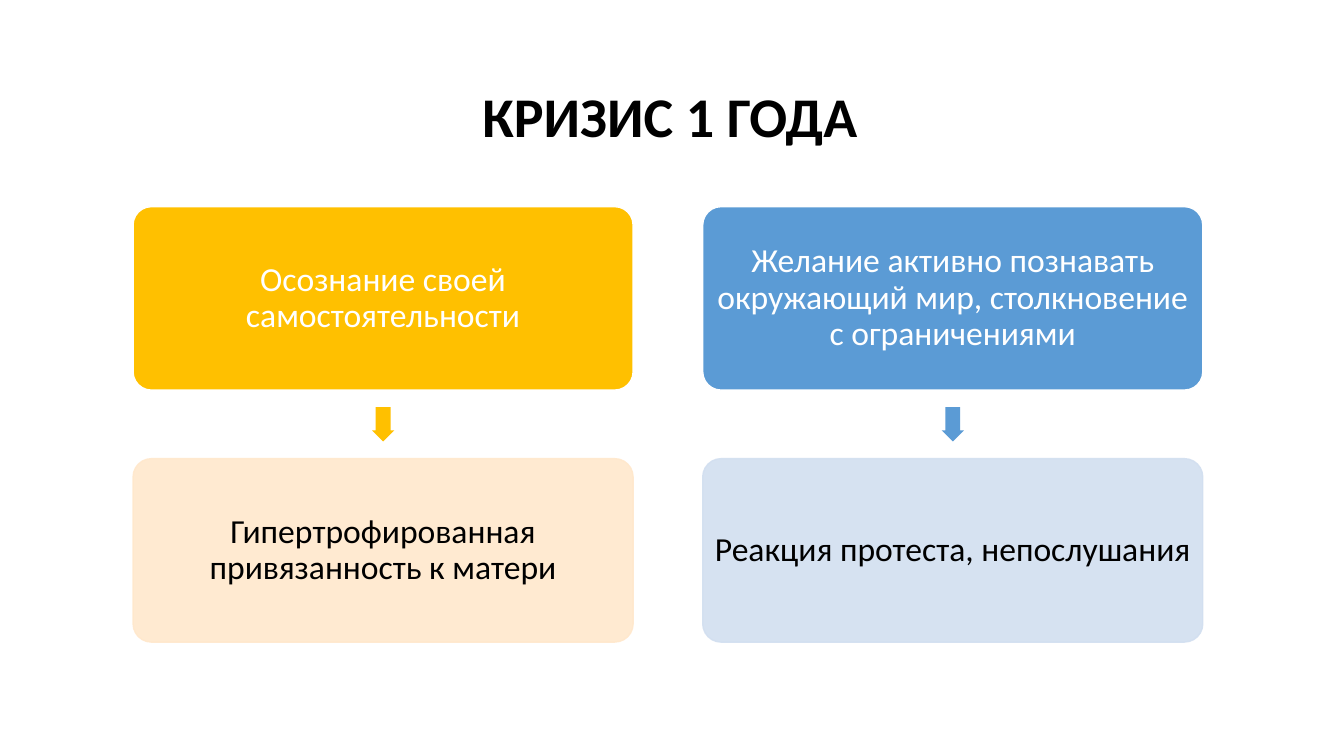
from pptx import Presentation
from pptx.dml.color import RGBColor
from pptx.enum.shapes import MSO_SHAPE
from pptx.enum.text import MSO_ANCHOR, PP_ALIGN
from pptx.oxml.ns import qn
from pptx.util import Inches, Pt
from lxml import etree

ROUNDED, DOWN_ARROW = MSO_SHAPE.ROUNDED_RECTANGLE, MSO_SHAPE.DOWN_ARROW
CENTER, MIDDLE = PP_ALIGN.CENTER, MSO_ANCHOR.MIDDLE

WHITE = RGBColor(0xFF, 0xFF, 0xFF)
BLACK = RGBColor(0x00, 0x00, 0x00)
GOLD = RGBColor(0xFF, 0xC0, 0x00)
BLUE = RGBColor(0x5B, 0x9B, 0xD5)
PALE_ORANGE = RGBColor(0xFF, 0xE8, 0xCC)
PALE_BLUE = RGBColor(0xD2, 0xDF, 0xF0)

CARD_W, CARD_H = 4.96, 1.82
CAUSE_TOP, EFFECT_TOP = 2.05, 4.55
ARROW_W, ARROW_H = 0.22, 0.34

# left edge, strong colour, pale colour, cause, effect
COLUMNS = [
    (1.32, GOLD, PALE_ORANGE, "Осознание своей самостоятельности",
     "Гипертрофированная привязанность к матери"),
    (6.97, BLUE, PALE_BLUE,
     "Желание активно познавать окружающий мир, столкновение с ограничениями",
     "Реакция протеста, непослушания"),
]


def write(tf, text, size, color, bold=False):
    tf.word_wrap = True
    tf.vertical_anchor = MIDDLE
    p = tf.paragraphs[0]
    p.alignment = CENTER
    r = p.add_run()
    r.text = text
    for name, value in {"name": "Calibri", "size": Pt(size), "bold": bold}.items():
        setattr(r.font, name, value)
    r.font.color.rgb = color
    return p


def add_filled(s, kind, left, top, width, height, fill):
    sp = s.shapes.add_shape(kind, Inches(left), Inches(top), Inches(width), Inches(height))
    sp.shadow.inherit = False
    sp.fill.solid()
    sp.fill.fore_color.rgb = fill
    return sp


def set_opacity(sp, percent):
    for color in sp._element.spPr.iter(qn("a:srgbClr")):
        etree.SubElement(color, qn("a:alpha"), val=str(percent * 1000))


def add_card(s, left, top, fill, line, text, color):
    sp = add_filled(s, ROUNDED, left, top, CARD_W, CARD_H, fill)
    sp.adjustments[0] = 0.1
    sp.line.color.rgb = line
    sp.line.width = Pt(1)
    tf = sp.text_frame
    for side in ("left", "top", "right", "bottom"):
        setattr(tf, f"margin_{side}", Inches(0.03))
    write(tf, text, 24, color).line_spacing = 0.9
    return sp


def add_arrow(s, left, fill):
    # Centred on the card and in the gap between the rows
    middle = (CAUSE_TOP + CARD_H + EFFECT_TOP) / 2
    sp = add_filled(s, DOWN_ARROW, left + (CARD_W - ARROW_W) / 2,
                    middle - ARROW_H / 2, ARROW_W, ARROW_H, fill)
    sp.adjustments[0] = 0.67
    sp.adjustments[1] = 0.5
    sp.line.fill.background()


def add_title(s, text):
    sp = s.shapes.add_textbox(Inches(3.93), Inches(0.76), Inches(5.43), Inches(0.77))
    write(sp.text_frame, text, 40, BLACK, bold=True)


def main():
    prs = Presentation()
    prs.slide_width, prs.slide_height = Inches(13.33), Inches(7.5)
    s = prs.slides.add_slide(prs.slide_layouts[6])

    # Heading
    add_title(s, "КРИЗИС 1 ГОДА")

    # Cause, arrow and effect in each column
    for left, strong, pale, cause, effect in COLUMNS:
        add_card(s, left, CAUSE_TOP, strong, WHITE, cause, WHITE)
        add_arrow(s, left, strong)
        set_opacity(add_card(s, left, EFFECT_TOP, pale, pale, effect, BLACK), 90)

    prs.save("out.pptx")


if __name__ == "__main__":
    main()
